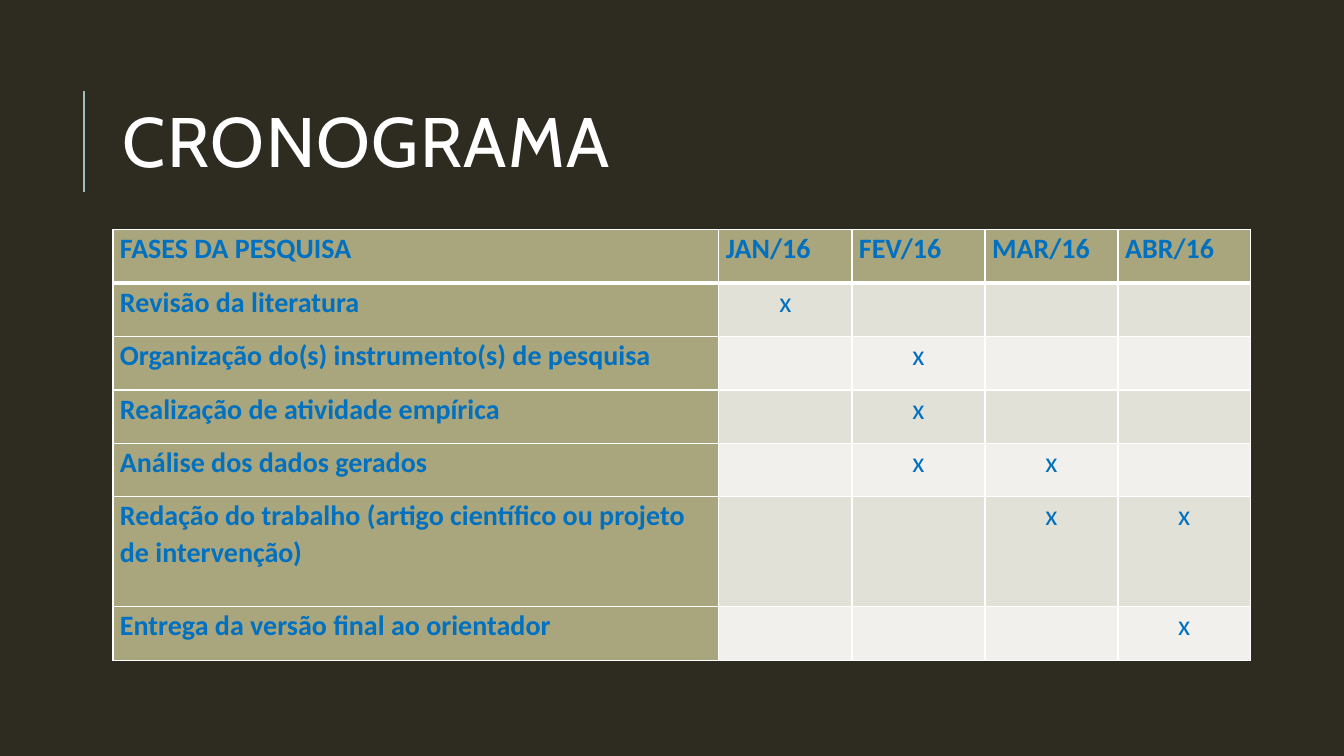
from lxml import etree
from pptx import Presentation
from pptx.dml.color import RGBColor
from pptx.enum.shapes import MSO_CONNECTOR
from pptx.enum.text import MSO_ANCHOR, PP_ALIGN
from pptx.oxml.ns import qn
from pptx.util import Inches, Pt

LINE = MSO_CONNECTOR.STRAIGHT
MIDDLE = MSO_ANCHOR.MIDDLE
LEFT, CENTER = PP_ALIGN.LEFT, PP_ALIGN.CENTER
COLORS = {"back": "2E2B21", "rule": "9CBEBD", "white": "FFFFFF", "text": "0070C0",
          "head": "A9A57C", "odd": "E2E1D7", "even": "F1F0EC"}
MONTHS = ["JAN/16", "FEV/16", "MAR/16", "ABR/16"]
PHASES = [
    ("Revisão da literatura", ["JAN/16"]),
    ("Organização do(s) instrumento(s) de pesquisa", ["FEV/16"]),
    ("Realização de atividade empírica", ["FEV/16"]),
    ("Análise dos dados gerados", ["FEV/16", "MAR/16"]),
    ("Redação do trabalho (artigo científico ou projeto de intervenção)",
     ["MAR/16", "ABR/16"]),
    ("Entrega da versão final ao orientador", ["ABR/16"]),
]
WIDTHS = [6.01, 1.32, 1.32, 1.32, 1.31]
HEIGHTS = [0.53, 0.53, 0.53, 0.53, 0.53, 1.09, 0.53]


def color(name):
    """Return the named colour."""
    return RGBColor.from_string(COLORS[name])


def set_font(font, name, size, tint, bold=False):
    """Set the face, size, colour and weight of a font."""
    font.name, font.size, font.bold = name, Pt(size), bold
    font.color.rgb = color(tint)


def add_title(slide, left, top, width, height):
    """Add the title with the upright rule to its left."""
    rule = slide.shapes.add_connector(
        LINE, Inches(left - 0.29), Inches(top + 1.26),
        Inches(left - 0.29), Inches(top + 0.26))
    rule.line.color.rgb = color("rule")
    rule.line.width = Pt(1.5)
    etree.SubElement(rule._element.spPr, qn("a:effectLst"))

    box = slide.shapes.add_textbox(Inches(left), Inches(top), Inches(width), Inches(height))
    frame = box.text_frame
    frame.word_wrap = True
    frame.vertical_anchor = MIDDLE
    para = frame.paragraphs[0]
    para.line_spacing = 0.8
    run = para.add_run()
    run.text = "CRONOGRAMA"
    set_font(para.font, "Cabin", 50, "white")
    run._r.get_or_add_rPr().set("spc", "100")


def add_edges(cell, top, bottom):
    """Draw white cell borders, with top and bottom widths in points."""
    props = cell._tc.get_or_add_tcPr()
    for side, width in (("L", 1), ("R", 1), ("T", top), ("B", bottom)):
        edge = etree.SubElement(props, qn(f"a:ln{side}"), w=str(Pt(width)))
        fill = etree.SubElement(edge, qn("a:solidFill"))
        etree.SubElement(fill, qn("a:srgbClr"), val=COLORS["white"])


def fill_cell(cell, text, tint, bold, align):
    """Write and colour one table cell."""
    cell.margin_left = cell.margin_right = Inches(0.07)
    cell.margin_top = cell.margin_bottom = 0
    cell.fill.solid()
    cell.fill.fore_color.rgb = color(tint)
    para = cell.text_frame.paragraphs[0]
    para.alignment = align
    para.line_spacing = 1.07
    if text:
        para.add_run().text = text
    set_font(para.font, "Calibri", 20, "text", bold)


def add_plan(slide, left, top):
    """Add the table of phases against months."""
    rows = [["FASES DA PESQUISA", *MONTHS]]
    rows += [[phase, *("x" if month in marks else "" for month in MONTHS)]
             for phase, marks in PHASES]
    table = slide.shapes.add_table(
        len(rows), len(WIDTHS), Inches(left), Inches(top),
        Inches(sum(WIDTHS)), Inches(sum(HEIGHTS))).table
    for col, width in zip(table.columns, WIDTHS):
        col.width = Inches(width)
    for row, height in zip(table.rows, HEIGHTS):
        row.height = Inches(height)
    for i, row in enumerate(rows):
        for j, text in enumerate(row):
            cell = table.cell(i, j)
            head = i == 0 or j == 0
            tint = "head" if head else "odd" if i % 2 else "even"
            add_edges(cell, 3 if i == 1 else 1, 3 if i == 0 else 1)
            fill_cell(cell, text, tint, head, LEFT if head else CENTER)


def main():
    """Build the slide and save it."""
    deck = Presentation()
    deck.slide_width, deck.slide_height = Inches(13.33), Inches(7.5)
    slide = deck.slides.add_slide(deck.slide_layouts[6])
    slide.background.fill.solid()
    slide.background.fill.fore_color.rgb = color("back")
    add_title(slide, 1.12, 0.64, 10.63, 1.64)
    add_plan(slide, 1.12, 2.28)
    deck.save("out.pptx")


if __name__ == "__main__":
    main()
